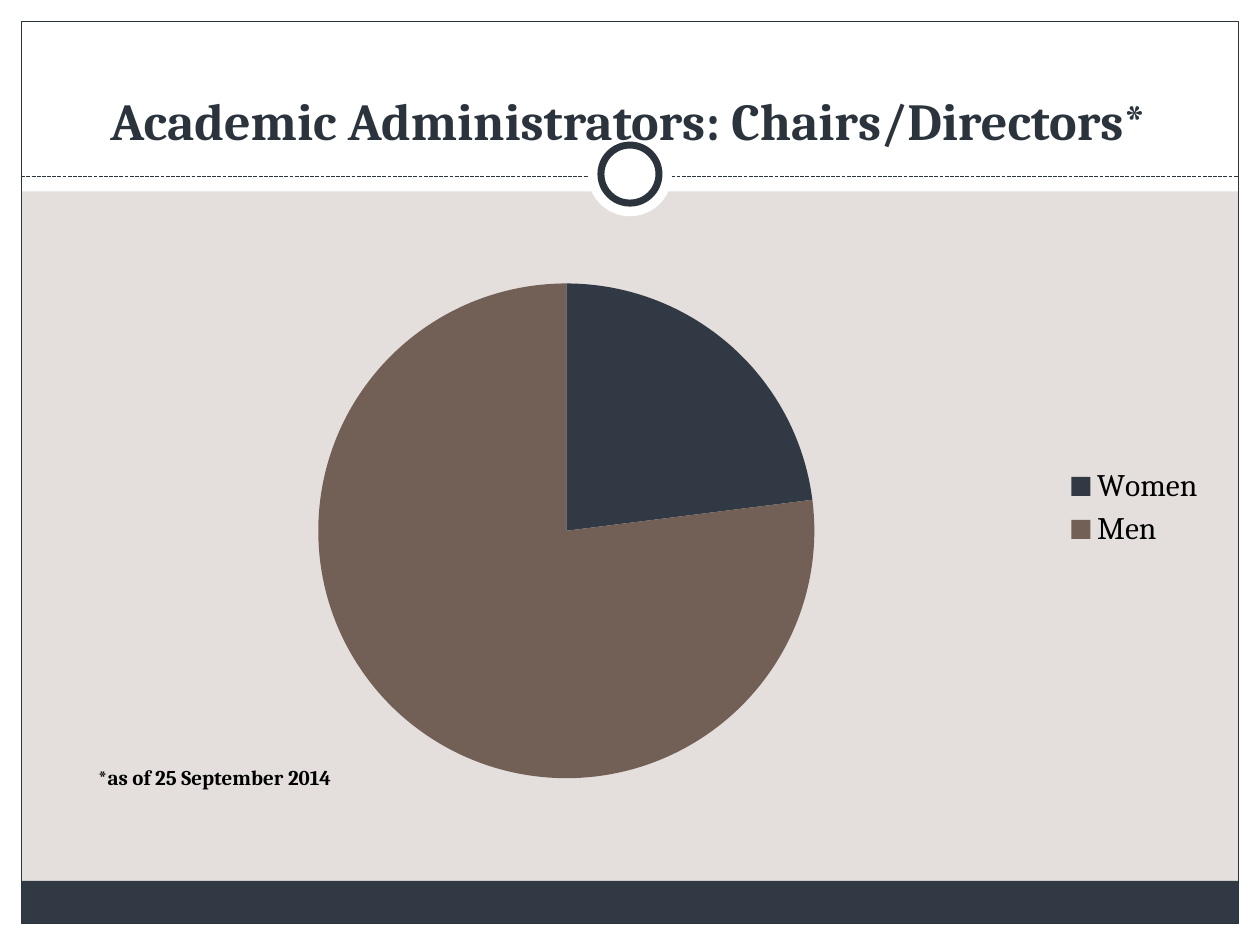
"""Build the slide on women and men among academic chairs and directors."""
from dataclasses import dataclass

from lxml import etree
from pptx import Presentation
from pptx.chart.data import CategoryChartData
from pptx.dml.color import RGBColor
from pptx.enum.chart import XL_CHART_TYPE, XL_LEGEND_POSITION
from pptx.enum.dml import MSO_LINE
from pptx.enum.shapes import MSO_CONNECTOR, MSO_SHAPE
from pptx.enum.text import MSO_ANCHOR, MSO_AUTO_SIZE, PP_ALIGN
from pptx.oxml.ns import qn
from pptx.util import Cm, Pt

RECT, OVAL = MSO_SHAPE.RECTANGLE, MSO_SHAPE.OVAL
PIE, RIGHT = XL_CHART_TYPE.PIE, XL_LEGEND_POSITION.RIGHT
STRAIGHT, DASH = MSO_CONNECTOR.STRAIGHT, MSO_LINE.SQUARE_DOT
BOTTOM, CENTER, FIXED = MSO_ANCHOR.BOTTOM, PP_ALIGN.CENTER, MSO_AUTO_SIZE.NONE


@dataclass(frozen=True)
class Theme:
    font: str = "Cambria"
    paper: str = "E4DFDC"
    white: str = "FFFFFF"
    black: str = "000000"
    ink: str = "2B333C"
    navy: str = "313A44"
    brown: str = "726056"
    head: float = 29.7
    key: float = 18
    note: float = 12
    base: float = 10
    thin: float = 0.75
    ring: float = 4


THEME = Theme()
TITLE = "Academic Administrators: Chairs/Directors*"
NOTE = "*as of 25 September 2014"
SHARES = [("Women", 23, THEME.navy), ("Men", 77, THEME.brown)]

WIDE, HIGH = 25.4, 19.05
EDGE, TOP, FOOT = 0.43, 3.86, 0.86
INNER, RULE = WIDE - 2 * EDGE, 3.56
HUB = (WIDE / 2, 3.51)
DISC, RING = 1.7, 1.17

MARGINS = [
    (0, HIGH - EDGE, WIDE, EDGE),
    (0, 0, WIDE, TOP),
    (0, 0, EDGE, HIGH),
    (WIDE - EDGE, 0, EDGE, HIGH),
]
FRAME = (EDGE, EDGE, INNER, HIGH - 2 * EDGE)
FOOTER = (EDGE, HIGH - EDGE - FOOT, INNER, FOOT)
HEAD_BOX = (0.84, 1.07, 23.7, 2.11)
PIE_BOX = (1.9, 4.44, 22.66, 11.63)
PLOT = {"x": 0.01, "y": 0.11, "w": 0.82, "h": 0.86}
NOTE_AT = {"x": 0, "y": 0.94}


def color(code):
    return RGBColor.from_string(code)


def around(hub, size):
    return hub[0] - size / 2, hub[1] - size / 2, size, size


def draw(slide, kind, box, fill=None, line=None, width=THEME.thin):
    shape = slide.shapes.add_shape(kind, *map(Cm, box))
    shape.shadow.inherit = False
    if fill:
        shape.fill.solid()
        shape.fill.fore_color.rgb = color(fill)
    else:
        shape.fill.background()
    if line:
        shape.line.color.rgb = color(line)
        shape.line.width = Pt(width)
    else:
        shape.line.fill.background()


def style(font, size, code, bold=False):
    font.name, font.size, font.bold = THEME.font, Pt(size), bold
    font.color.rgb = color(code)


def add_rule(slide):
    ends = (EDGE, RULE, WIDE - EDGE, RULE)
    rule = slide.shapes.add_connector(STRAIGHT, *map(Cm, ends))
    rule.line.color.rgb = color(THEME.ink)
    rule.line.width = Pt(THEME.thin)
    rule.line.dash_style = DASH
    etree.SubElement(rule.element.spPr, qn("a:effectLst"))


def add_frame(slide):
    for box in MARGINS:
        draw(slide, RECT, box, THEME.white)
    draw(slide, RECT, FOOTER, THEME.navy)
    draw(slide, RECT, FRAME, line=THEME.ink)
    add_rule(slide)
    draw(slide, OVAL, around(HUB, DISC), THEME.white)
    draw(slide, OVAL, around(HUB, RING), THEME.white, THEME.ink, THEME.ring)


def set_layout(node, index, spot, inner=False):
    for old in node.findall(qn("c:layout")):
        node.remove(old)
    layout = etree.Element(qn("c:layout"))
    manual = etree.SubElement(layout, qn("c:manualLayout"))
    items = [("layoutTarget", "inner")] if inner else []
    items += [("xMode", "edge"), ("yMode", "edge"), *spot.items()]
    for tag, val in items:
        etree.SubElement(manual, qn("c:" + tag)).set("val", str(val))
    node.insert(index, layout)


def add_pie(slide):
    names, vals, fills = zip(*SHARES)
    data = CategoryChartData()
    data.categories = names
    data.add_series("Series 1", vals)
    chart = slide.shapes.add_chart(PIE, *map(Cm, PIE_BOX), data).chart
    style(chart.font, THEME.base, THEME.black)

    chart.has_title = True
    title = chart.chart_title
    run = title.text_frame.paragraphs[0].add_run()
    run.text = NOTE
    style(run.font, THEME.note, THEME.black, True)
    set_layout(title._element, 1, NOTE_AT)

    chart.has_legend = True
    chart.legend.position = RIGHT
    chart.legend.include_in_layout = False
    style(chart.legend.font, THEME.key, THEME.black)

    plot = chart.plots[0]
    plot.vary_by_categories = True
    for i, code in enumerate(fills):
        fill = plot.series[0].points[i].format.fill
        fill.solid()
        fill.fore_color.rgb = color(code)
    set_layout(plot._element.getparent(), 0, PLOT, True)


def add_title(slide):
    title = slide.shapes.title
    title.left, title.top, title.width, title.height = map(Cm, HEAD_BOX)
    frame = title.text_frame
    frame.word_wrap, frame.auto_size = True, FIXED
    frame.vertical_anchor = BOTTOM
    para = frame.paragraphs[0]
    para.alignment = CENTER
    run = para.add_run()
    run.text = TITLE
    style(run.font, THEME.head, THEME.ink, True)
    title.element.getparent().append(title.element)


def main():
    deck = Presentation()
    deck.slide_width, deck.slide_height = Cm(WIDE), Cm(HIGH)
    slide = deck.slides.add_slide(deck.slide_layouts[5])
    slide.background.fill.solid()
    slide.background.fill.fore_color.rgb = color(THEME.paper)
    add_frame(slide)
    add_pie(slide)
    add_title(slide)
    deck.save("out.pptx")


if __name__ == "__main__":
    main()
